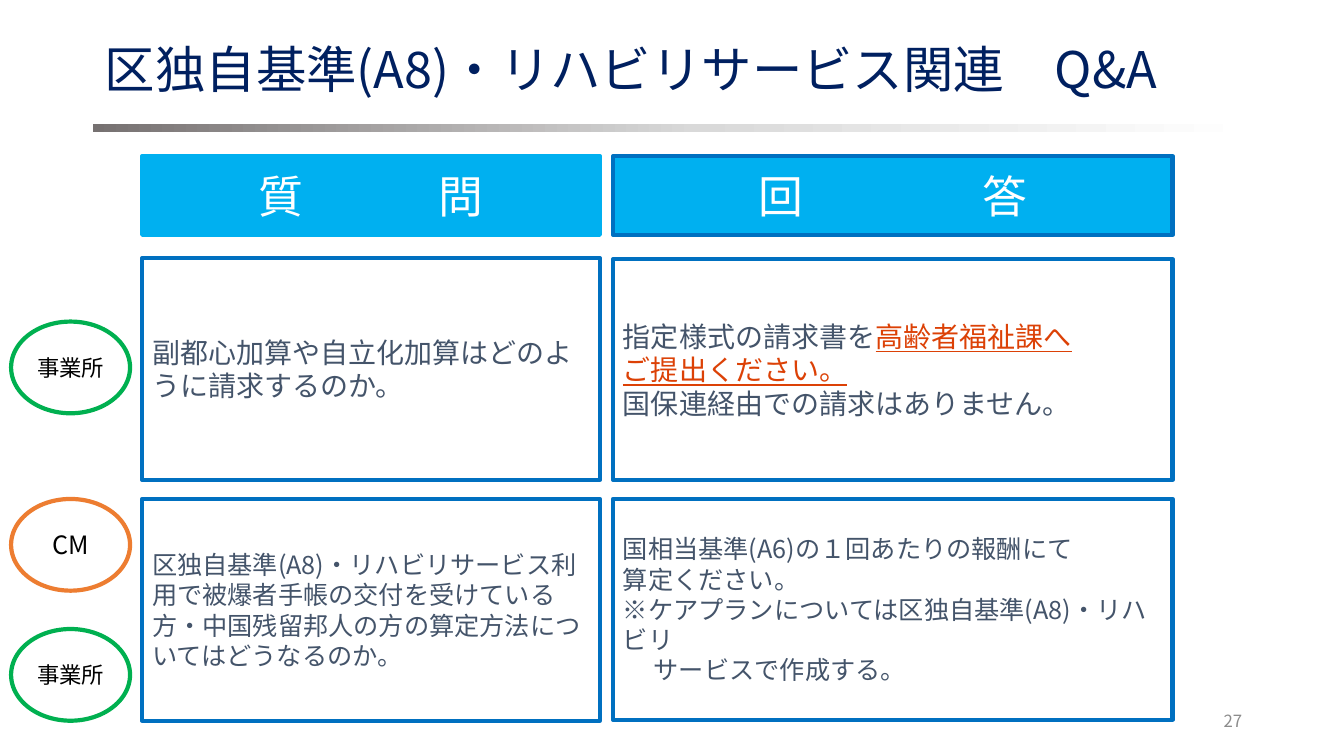
from lxml.etree import SubElement
from pptx import Presentation
from pptx.dml.color import RGBColor
from pptx.enum.shapes import MSO_SHAPE as Kind
from pptx.enum.text import MSO_ANCHOR as Anchor, MSO_AUTO_SIZE as Fit, PP_ALIGN as Align
from pptx.oxml.ns import qn
from pptx.util import Inches, Pt

FONT = "Noto Sans CJK JP"
NAVY = RGBColor(0x00, 0x20, 0x60)
SKY = RGBColor(0x00, 0xB0, 0xF0)
BLUE = RGBColor(0x00, 0x70, 0xC0)
SLATE = RGBColor(0x44, 0x54, 0x6A)
RED = RGBColor(0xDC, 0x41, 0x06)
GREEN = RGBColor(0x00, 0xB0, 0x50)
ORANGE = RGBColor(0xED, 0x7D, 0x31)
GRAY = RGBColor(0x8C, 0x8C, 0x8C)
WHITE = RGBColor(0xFF, 0xFF, 0xFF)
BLACK = RGBColor(0x00, 0x00, 0x00)
FADE = ((0, RGBColor(0x76, 0x71, 0x71)), (52, RGBColor(0xD9, 0xD9, 0xD9)), (100, WHITE))

ASK = (1.41, 4.54)
REPLY = (6.08, 5.55)


def write(frame, lines, size, color, align=Align.LEFT):
    """Fill a frame with lines; a line is a list of (text, marked) runs."""
    frame.word_wrap = True
    frame.auto_size = Fit.NONE
    frame.vertical_anchor = Anchor.MIDDLE
    for index, line in enumerate(lines):
        para = frame.add_paragraph() if index else frame.paragraphs[0]
        para.alignment = align
        font = para.font
        font.size, font.name = Pt(size), FONT
        font.color.rgb = color
        SubElement(font._element, qn("a:ea"), typeface=FONT)
        for text, marked in line:
            run = para.add_run()
            run.text = text
            if marked:
                run.font.color.rgb = RED
                run.font.underline = True


def plain(*lines):
    """Turn strings into unmarked lines."""
    return [[(line, False)] for line in lines]


def add_title(slide, text):
    """Place and format the title."""
    title = slide.shapes.title
    title.left, title.top = Inches(0.94), Inches(0.38)
    title.width, title.height = Inches(11.5), Inches(0.67)
    write(title.text_frame, plain(text), 36, NAVY)
    title.text_frame.paragraphs[0].line_spacing = 0.9


def add_form(slide, kind, left, top, width, height):
    """Add a shape without shadow."""
    form = slide.shapes.add_shape(kind, Inches(left), Inches(top), Inches(width), Inches(height))
    form.shadow.inherit = False
    return form


def add_rule(slide):
    """Add the fading bar under the title."""
    bar = add_form(slide, Kind.FLOWCHART_PROCESS, 0.92, 1.23, 11.5, 0.08)
    bar.line.fill.background()
    bar.fill.gradient()
    bar.fill.gradient_angle = 0
    stops = bar._element.spPr.find(f".//{qn('a:gsLst')}")
    stops.clear()
    for place, color in FADE:
        stop = SubElement(stops, qn("a:gs"), pos=str(place * 1000))
        SubElement(stop, qn("a:srgbClr"), val=str(color))


def outline(form, color):
    """Give a shape its thick line."""
    form.line.color.rgb = color
    form.line.width = Pt(3)


def add_head(slide, column, text, edge):
    """Add a column heading."""
    left, width = column
    head = add_form(slide, Kind.RECTANGLE, left, 1.55, width, 0.78)
    head.fill.solid()
    head.fill.fore_color.rgb = SKY
    outline(head, edge)
    write(head.text_frame, plain(text), 32, WHITE, Align.CENTER)


def add_cell(slide, column, top, height, lines, size):
    """Add a framed question or answer."""
    left, width = column
    cell = add_form(slide, Kind.RECTANGLE, left, top, width, height)
    cell.fill.background()
    outline(cell, BLUE)
    write(cell.text_frame, lines, size, SLATE)


def add_tag(slide, top, text, size, edge):
    """Add an oval that names who asks."""
    tag = add_form(slide, Kind.OVAL, 0.11, top, 1.18, 0.91)
    tag.fill.solid()
    tag.fill.fore_color.rgb = WHITE
    outline(tag, edge)
    tag.text_frame.margin_left = tag.text_frame.margin_right = 0
    write(tag.text_frame, plain(text), size, BLACK, Align.CENTER)


def add_number(slide, text):
    """Add the page number."""
    box = slide.shapes.add_textbox(Inches(9.42), Inches(6.95), Inches(3), Inches(0.4))
    write(box.text_frame, plain(text), 12, GRAY, Align.RIGHT)


def main():
    """Build and save the slide."""
    deck = Presentation()
    deck.slide_width, deck.slide_height = Inches(13.33), Inches(7.5)
    slide = deck.slides.add_slide(deck.slide_layouts[5])

    add_title(slide, "区独自基準(A8)・リハビリサービス関連　Q&A")
    add_number(slide, "27")
    add_rule(slide)
    add_head(slide, ASK, "質　　　問", SKY)
    add_head(slide, REPLY, "回　　　　答", BLUE)

    add_cell(slide, ASK, 2.56, 2.2, plain("副都心加算や自立化加算はどのように請求するのか。"), 20)
    add_cell(slide, REPLY, 2.57, 2.19, [
        [("指定様式の請求書を", False), ("高齢者福祉課へ", True)],
        [("ご提出ください。", True)],
        [("国保連経由での請求はありません。", False)],
    ], 20)
    add_cell(slide, ASK, 4.95, 2.2, plain(
        "区独自基準(A8)・リハビリサービス利用で被爆者手帳の交付を受けている方・"
        "中国残留邦人の方の算定方法についてはどうなるのか。"), 18)
    add_cell(slide, REPLY, 4.95, 2.19, plain(
        "国相当基準(A6)の１回あたりの報酬にて",
        "算定ください。",
        "※ケアプランについては区独自基準(A8)・リハビリ",
        "　 サービスで作成する。"), 18)

    add_tag(slide, 4.95, "CM", 18, ORANGE)
    for top in (3.19, 6.24):
        add_tag(slide, top, "事業所", 16, GREEN)
    deck.save("out.pptx")


if __name__ == "__main__":
    main()
